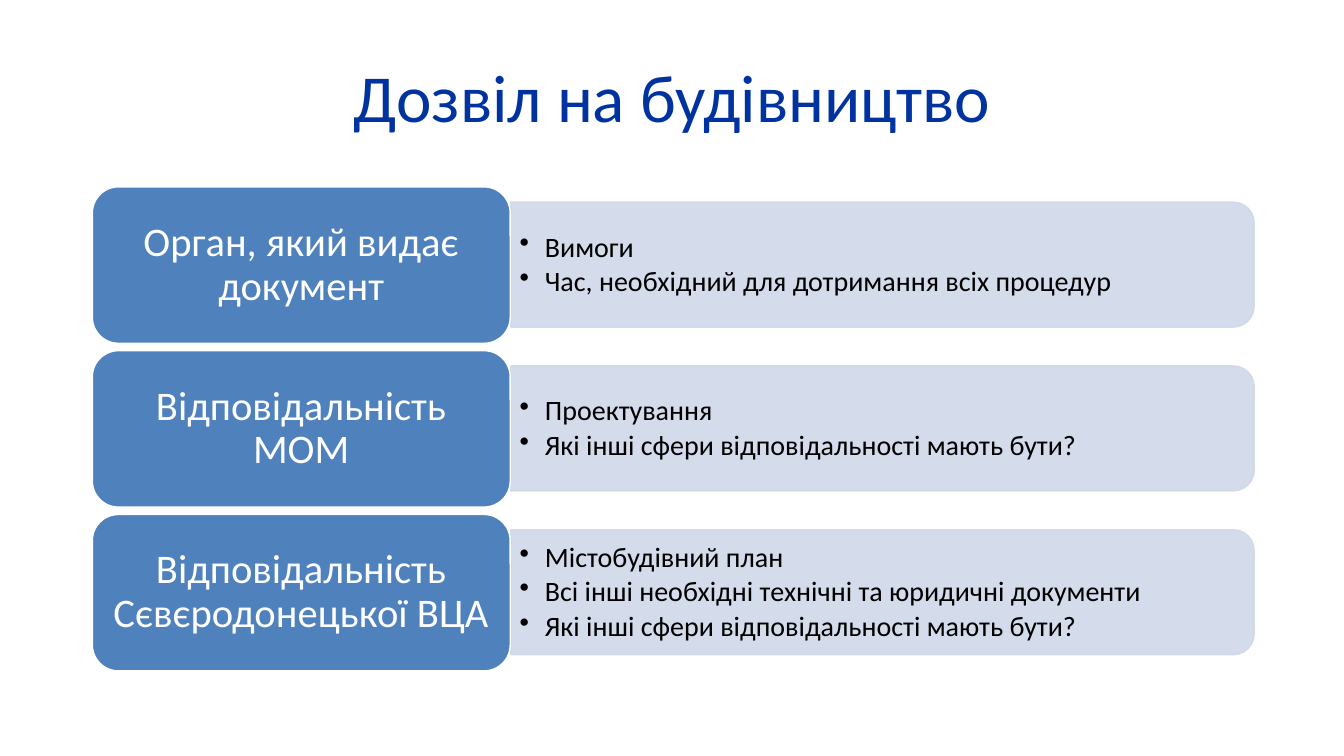
import dataclasses

import lxml.etree
import pptx
import pptx.dml.color
import pptx.enum.shapes
import pptx.enum.text
import pptx.oxml.ns
import pptx.presentation
import pptx.shapes.autoshape
import pptx.slide
import pptx.text.text
import pptx.util

EMU_PER_PX = 9525
FONT = "Calibri"
TITLE_BLUE = pptx.dml.color.RGBColor(0x00, 0x33, 0xA0)
LABEL_BLUE = pptx.dml.color.RGBColor(0x4F, 0x81, 0xBD)
PANEL_BLUE = pptx.dml.color.RGBColor(0xD0, 0xD8, 0xE8)
WHITE = pptx.dml.color.RGBColor(0xFF, 0xFF, 0xFF)
BLACK = pptx.dml.color.RGBColor(0x00, 0x00, 0x00)
SHAPES = pptx.enum.shapes.MSO_SHAPE
CENTER = pptx.enum.text.PP_ALIGN.CENTER
LEFT = pptx.enum.text.PP_ALIGN.LEFT

FIRST_ROW_TOP, ROW_PITCH = 178, 156
LABEL_LEFT, LABEL_WIDTH, LABEL_HEIGHT = 88, 398, 149
PANEL_LEFT, PANEL_WIDTH, PANEL_HEIGHT = 487, 708, 119
DETAILS_WIDTH, DETAILS_HEIGHT = 703, 107
BULLET_INDENT = 24


@dataclasses.dataclass(frozen=True)
class Row:
    label: str
    details: tuple[str, ...]


@dataclasses.dataclass(frozen=True)
class TextStyle:
    size: int
    color: pptx.dml.color.RGBColor
    alignment: pptx.enum.text.PP_ALIGN
    margin_x: int
    margin_y: int
    bulleted: bool = False


TITLE_STYLE = TextStyle(48, TITLE_BLUE, CENTER, 10, 5)
LABEL_STYLE = TextStyle(29, WHITE, CENTER, 12, 6)
DETAILS_STYLE = TextStyle(20, BLACK, LEFT, 8, 4, bulleted=True)

ROWS = (
    Row("Орган, який видає документ", ("Вимоги", "Час, необхідний для дотримання всіх процедур")),
    Row("Відповідальність МОМ", ("Проектування", "Які інші сфери відповідальності мають бути?")),
    Row(
        "Відповідальність Сєвєродонецької ВЦА",
        (
            "Містобудівний план",
            "Всі інші необхідні технічні та юридичні документи",
            "Які інші сфери відповідальності мають бути?",
        ),
    ),
)


def px(length: int) -> pptx.util.Emu:
    """Turn whole pixels into EMU."""
    return pptx.util.Emu(length * EMU_PER_PX)


def add_bullet(paragraph: pptx.text.text._Paragraph) -> None:
    """Give a paragraph a round bullet with a hanging indent."""
    properties = paragraph._p.get_or_add_pPr()
    properties.set("marL", str(px(BULLET_INDENT)))
    properties.set("indent", str(px(-BULLET_INDENT)))
    bullet = lxml.etree.SubElement(properties, pptx.oxml.ns.qn("a:buChar"))
    bullet.set("char", "•")


def write_text(frame: pptx.text.text.TextFrame, lines: tuple[str, ...], style: TextStyle) -> None:
    """Fill a text frame with one paragraph per line."""
    frame.word_wrap = True
    frame.vertical_anchor = pptx.enum.text.MSO_ANCHOR.MIDDLE
    frame.margin_left = frame.margin_right = px(style.margin_x)
    frame.margin_top = frame.margin_bottom = px(style.margin_y)
    for index, line in enumerate(lines):
        paragraph = frame.add_paragraph() if index else frame.paragraphs[0]
        if style.bulleted:
            add_bullet(paragraph)
        paragraph.alignment = style.alignment
        paragraph.line_spacing = 0.9
        if index:
            paragraph.space_before = pptx.util.Pt(3)
        run = paragraph.add_run()
        run.text = line
        run.font.name = FONT
        run.font.size = pptx.util.Pt(style.size)
        run.font.color.rgb = style.color


def add_text(
    slide: pptx.slide.Slide, box: tuple[int, int, int, int], lines: tuple[str, ...], style: TextStyle
) -> None:
    """Add a text box."""
    write_text(slide.shapes.add_textbox(*map(px, box)).text_frame, lines, style)


def add_block(
    slide: pptx.slide.Slide,
    kind: pptx.enum.shapes.MSO_SHAPE,
    box: tuple[int, int, int, int],
    fill: pptx.dml.color.RGBColor,
    line: pptx.dml.color.RGBColor,
) -> pptx.shapes.autoshape.Shape:
    """Add a filled shape with a thin outline and no shadow."""
    shape = slide.shapes.add_shape(kind, *map(px, box))
    shape.shadow.inherit = False
    shape.fill.solid()
    shape.fill.fore_color.rgb = fill
    shape.line.color.rgb = line
    shape.line.width = pptx.util.Pt(1)
    return shape


def add_panel(slide: pptx.slide.Slide, middle: int) -> None:
    """Add a translucent panel rounded on its right side."""
    left = PANEL_LEFT + (PANEL_WIDTH - PANEL_HEIGHT) // 2
    box = (left, middle - PANEL_WIDTH // 2, PANEL_HEIGHT, PANEL_WIDTH)
    panel = add_block(slide, SHAPES.ROUND_2_SAME_RECTANGLE, box, PANEL_BLUE, PANEL_BLUE)
    panel.rotation = 90
    for color in panel._element.spPr.iter(pptx.oxml.ns.qn("a:srgbClr")):
        lxml.etree.SubElement(color, pptx.oxml.ns.qn("a:alpha")).set("val", "90000")


def add_row(slide: pptx.slide.Slide, row: Row, top: int) -> None:
    """Add a label with its panel of details."""
    middle = top + LABEL_HEIGHT // 2
    add_panel(slide, middle)
    details_box = (PANEL_LEFT, middle - DETAILS_HEIGHT // 2, DETAILS_WIDTH, DETAILS_HEIGHT)
    add_text(slide, details_box, row.details, DETAILS_STYLE)
    label_box = (LABEL_LEFT, top, LABEL_WIDTH, LABEL_HEIGHT)
    label = add_block(slide, SHAPES.ROUNDED_RECTANGLE, label_box, LABEL_BLUE, WHITE)
    write_text(label.text_frame, (row.label,), LABEL_STYLE)


def build() -> pptx.presentation.Presentation:
    """Build the presentation."""
    presentation = pptx.Presentation()
    presentation.slide_width, presentation.slide_height = px(1280), px(720)
    slide = presentation.slides.add_slide(presentation.slide_layouts[6])
    add_text(slide, (88, 38, 1104, 116), ("Дозвіл на будівництво",), TITLE_STYLE)
    for index, row in enumerate(ROWS):
        add_row(slide, row, FIRST_ROW_TOP + index * ROW_PITCH)
    return presentation


def main() -> None:
    """Save the presentation."""
    build().save("out.pptx")


if __name__ == "__main__":
    main()
